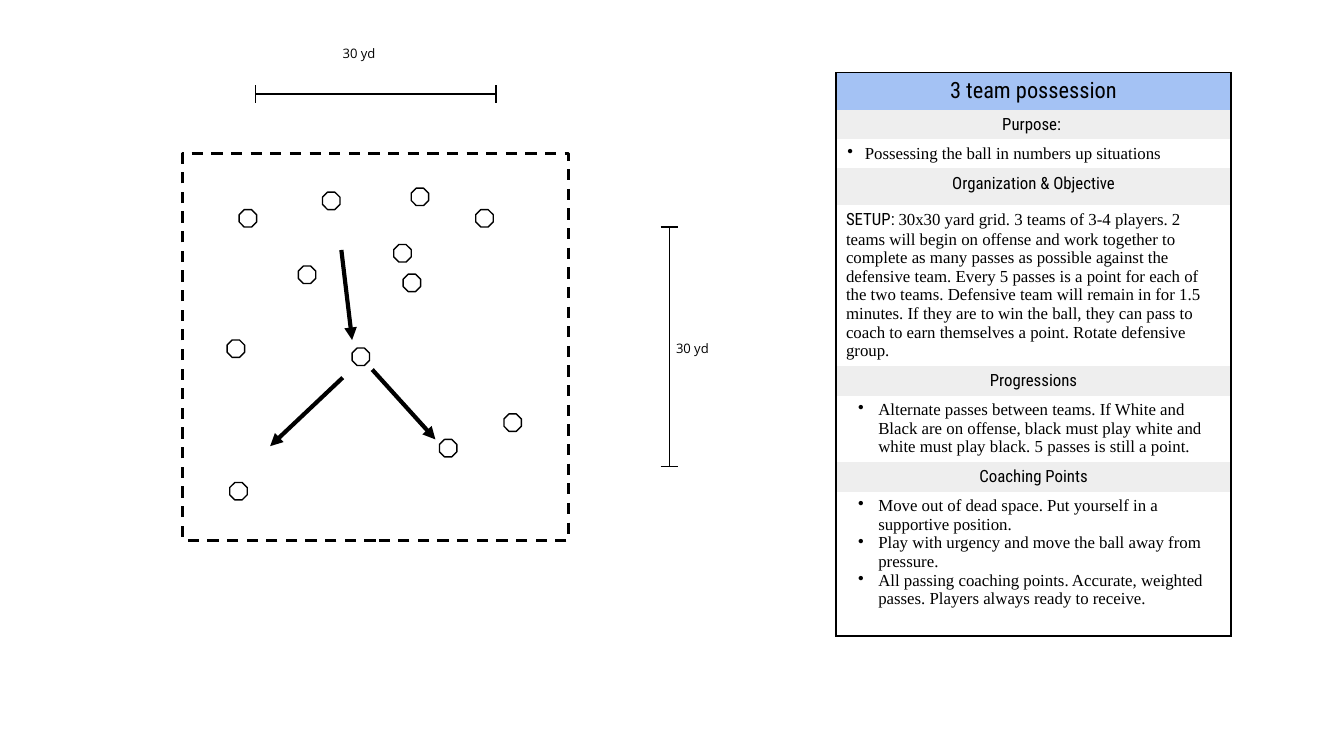
"""Build a soccer practice slide: a drill diagram beside its session plan."""
from typing import NamedTuple

from lxml.etree import SubElement
from pptx import Presentation
from pptx.dml.color import RGBColor
from pptx.enum.dml import MSO_LINE_DASH_STYLE as Dash
from pptx.enum.shapes import MSO_CONNECTOR_TYPE as Connector, MSO_SHAPE as Preset
from pptx.enum.text import PP_ALIGN as Align
from pptx.oxml.ns import qn
from pptx.util import Inches, Length, Pt

COLORS = {"ink": "000000", "paper": "FFFFFF", "title": "A4C2F4", "heading": "EEEEEE"}
HEADING_FONT, BODY_FONT, LABEL_FONT = "Roboto Condensed", "Times New Roman", "Open Sans"
WIDE, HIGH = 10, 5.625
COLUMNS = 100
PLAYER_SIZE = 1.3
TICK = 0.65
NO_STYLE = "{2D5ABB26-0587-4C30-8999-92F81FD0307C}"


class Point(NamedTuple):
    column: float
    row: float


class Dimension(NamedTuple):
    start: Point
    end: Point
    label: Point


class PlanRow(NamedTuple):
    height: float
    paragraphs: list[str]
    fill: str = "paper"
    font: str = BODY_FONT
    size: float = 9
    indent: float = 0
    hanging: float = 0
    lead: str = ""


def heading(text: str, height: float = 2.23, fill: str = "heading", size: float = 9) -> PlanRow:
    """Describe a centred heading row."""
    return PlanRow(height, [text], fill, HEADING_FONT, size)


PLAYERS = [
    Point(17.8, 15.6), Point(22.2, 19.8), Point(35.4, 15.6), Point(29.3, 18.2),
    Point(30, 20.4), Point(24, 14.3), Point(16.9, 25.3), Point(32.7, 32.7),
    Point(26.2, 25.9), Point(17.1, 35.9), Point(37.5, 30.8), Point(30.6, 14),
]
PASSES = [
    (Point(25.4, 18.6), Point(26.2, 25.3)),
    (Point(25.5, 28.1), Point(20.1, 33.2)),
    (Point(27.7, 27.5), Point(32.4, 32.7)),
]
DIMENSIONS = [
    Dimension(Point(49.8, 16.9), Point(49.8, 34.7), Point(50.3, 25.3)),
    Dimension(Point(19, 7), Point(36.9, 7), Point(25.5, 3.4)),
]
PLAN = [
    heading("3 team possession", 2.75, "title", 12),
    heading("Purpose: "),
    PlanRow(2.08, ["Possessing the ball in numbers up situations"], indent=1.4, hanging=1.3),
    heading("Organization & Objective", 2.75),
    PlanRow(11.9, [
        "30x30 yard grid. 3 teams of 3-4 players. 2 teams will begin on offense and work "
        "together to complete as many passes as possible against the defensive team. Every 5 "
        "passes is a point for each of the two teams. Defensive team will remain in for 1.5 "
        "minutes. If they are to win the ball, they can pass to coach to earn themselves a "
        "point. Rotate defensive group."], lead="SETUP: "),
    heading("Progressions"),
    PlanRow(4.9, [
        "Alternate passes between teams. If White and Black are on offense, black must play "
        "white and white must play black. 5 passes is still a point."], indent=2.4, hanging=1.5),
    heading("Coaching Points"),
    PlanRow(10.75, [
        "Move out of dead space. Put yourself in a supportive position.",
        "Play with urgency and move the ball away from pressure.",
        "All passing coaching points. Accurate, weighted passes. Players always ready to receive.",
    ], indent=2.4, hanging=1.5),
]


def grid(cells: float) -> Length:
    """Convert square grid cells to a length."""
    return Inches(round(cells * WIDE / COLUMNS, 4))


def color(name: str) -> RGBColor:
    """Look up a named colour."""
    return RGBColor.from_string(COLORS[name])


def write_text(paragraph, text: str, *, font: str, size: float, align: Align = Align.LEFT) -> None:
    """Append a formatted run to a paragraph."""
    paragraph.alignment = align
    run = paragraph.add_run()
    run.text = text
    run.font.name, run.font.size = font, Pt(size)
    run.font.color.rgb = color("ink")


def add_bullet(paragraph, indent: float, hanging: float) -> None:
    """Give a paragraph a round bullet with a hanging indent."""
    properties = paragraph._p.get_or_add_pPr()
    properties.set("marL", str(grid(indent)))
    properties.set("indent", str(-grid(hanging)))
    bullet_color = SubElement(properties, qn("a:buClr"))
    SubElement(bullet_color, qn("a:srgbClr"), val=COLORS["ink"])
    SubElement(properties, qn("a:buChar"), char="•")


def draw_line(shapes, start: Point, end: Point, width: float = 0.75, arrow: bool = False) -> None:
    """Draw a straight line, optionally with an arrowhead at its end."""
    line = shapes.add_connector(Connector.STRAIGHT, *map(grid, (*start, *end)))
    line.line.color.rgb = color("ink")
    line.line.width = Pt(width)
    properties = line._element.spPr
    if arrow:
        SubElement(properties.find(qn("a:ln")), qn("a:tailEnd"), type="triangle")
    SubElement(properties, qn("a:effectLst"))


def draw_dimension(slide, dimension: Dimension) -> None:
    """Draw a grouped dimension line with end ticks and a label."""
    shapes = slide.shapes.add_group_shape().shapes
    start, end, label = dimension
    draw_line(shapes, start, end)
    across, down = (0, TICK) if start.row == end.row else (TICK, 0)
    for column, row in (start, end):
        draw_line(shapes, Point(column - across, row - down), Point(column + across, row + down))
    frame = shapes.add_textbox(*map(grid, (*label, 5.1, 1.2))).text_frame
    frame.word_wrap = True
    frame.margin_left = frame.margin_right = frame.margin_top = frame.margin_bottom = 0
    write_text(frame.paragraphs[0], "30 yd", font=LABEL_FONT, size=7)


def draw_outline(slide, preset: Preset, corner: Point, size: Point, width: float):
    """Draw an outlined preset shape without a shadow."""
    shape = slide.shapes.add_shape(preset, *map(grid, (*corner, *size)))
    shape.shadow.inherit = False
    shape.fill.background()
    shape.line.color.rgb = color("ink")
    shape.line.width = Pt(width)
    return shape


def add_borders(cell, sides: str) -> None:
    """Add thin borders on the named sides of a cell."""
    properties = cell._tc.get_or_add_tcPr()
    for index, side in enumerate(sides):
        border = SubElement(properties, qn(f"a:ln{side}"), w=str(Pt(0.75)))
        fill = SubElement(border, qn("a:solidFill"))
        SubElement(fill, qn("a:srgbClr"), val=COLORS["ink"])
        properties.insert(index, border)


def draw_plan(slide) -> None:
    """Draw the session plan as a one-column table."""
    height = sum(row.height for row in PLAN)
    frame = slide.shapes.add_table(len(PLAN), 1, *map(grid, (62.2, 5.4, 29.4, height)))
    table = frame.table
    table._tbl.tblPr.find(qn("a:tableStyleId")).text = NO_STYLE
    for index, row in enumerate(PLAN):
        table.rows[index].height = grid(row.height)
        cell = table.cell(index, 0)
        cell.margin_left = cell.margin_right = grid(0.75)
        cell.margin_top = cell.margin_bottom = grid(0.38)
        cell.fill.solid()
        cell.fill.fore_color.rgb = color(row.fill)
        top = "T" if index == 0 else ""
        bottom = "B" if index == len(PLAN) - 1 else ""
        add_borders(cell, "LR" + top + bottom)
        align = Align.CENTER if row.font == HEADING_FONT else Align.LEFT
        for position, text in enumerate(row.paragraphs):
            text_frame = cell.text_frame
            paragraph = text_frame.add_paragraph() if position else text_frame.paragraphs[0]
            if row.indent:
                add_bullet(paragraph, row.indent, row.hanging)
            if row.lead:
                write_text(paragraph, row.lead, font=HEADING_FONT, size=row.size)
            write_text(paragraph, text, font=row.font, size=row.size, align=align)


def main() -> None:
    """Build and save the slide."""
    presentation = Presentation()
    presentation.slide_width, presentation.slide_height = Inches(WIDE), Inches(HIGH)
    slide = presentation.slides.add_slide(presentation.slide_layouts[6])
    draw_plan(slide)
    pitch = draw_outline(slide, Preset.RECTANGLE, Point(13.6, 11.4), Point(28.7, 28.8), 1.5)
    pitch.line.dash_style = Dash.DASH
    for dimension in DIMENSIONS:
        draw_dimension(slide, dimension)
    for corner in PLAYERS:
        player = draw_outline(slide, Preset.OCTAGON, corner, Point(PLAYER_SIZE, PLAYER_SIZE), 0.75)
        player.fill.solid()
        player.fill.fore_color.rgb = color("paper")
    for start, end in PASSES:
        draw_line(slide.shapes, start, end, width=2.25, arrow=True)
    presentation.save("out.pptx")


if __name__ == "__main__":
    main()
